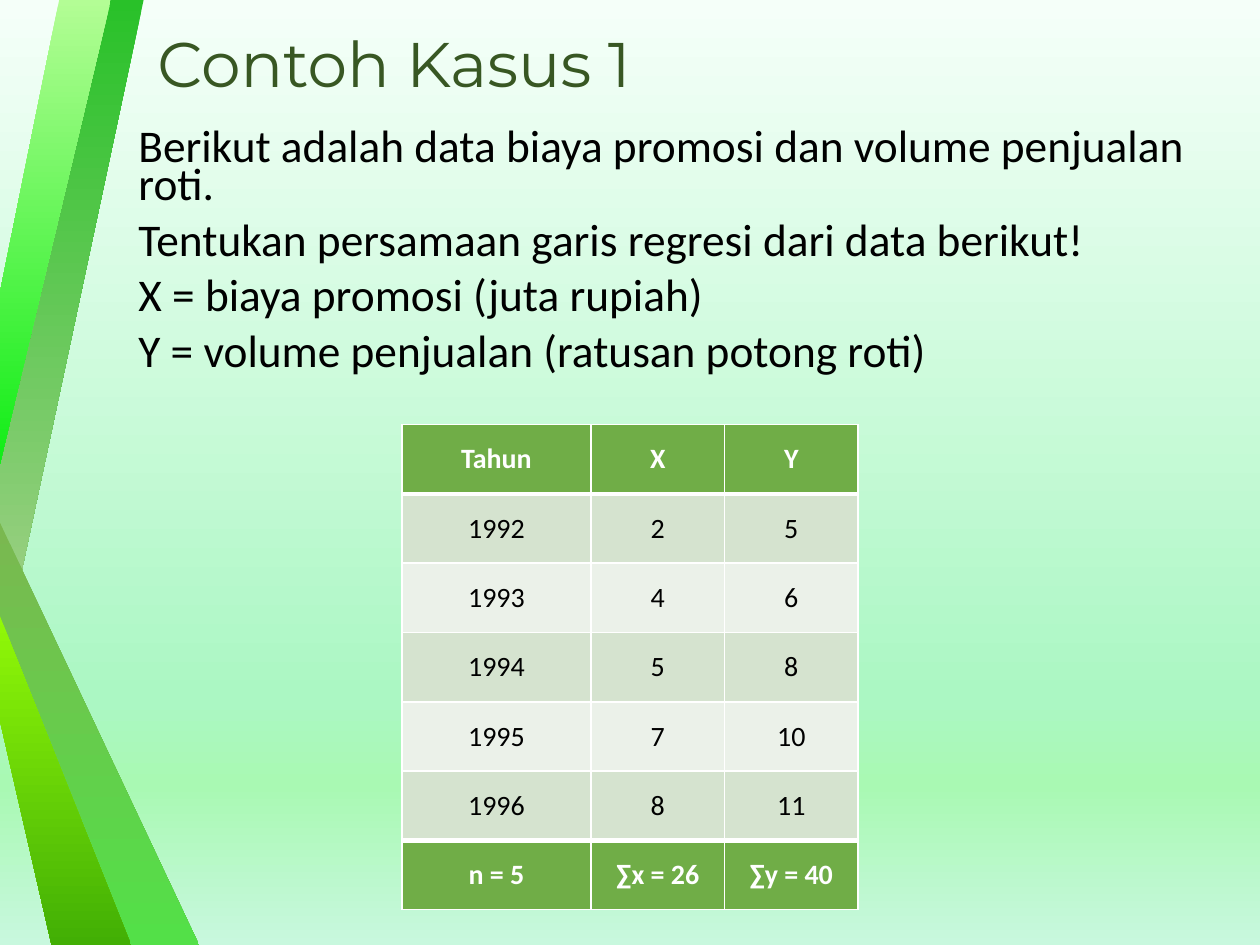
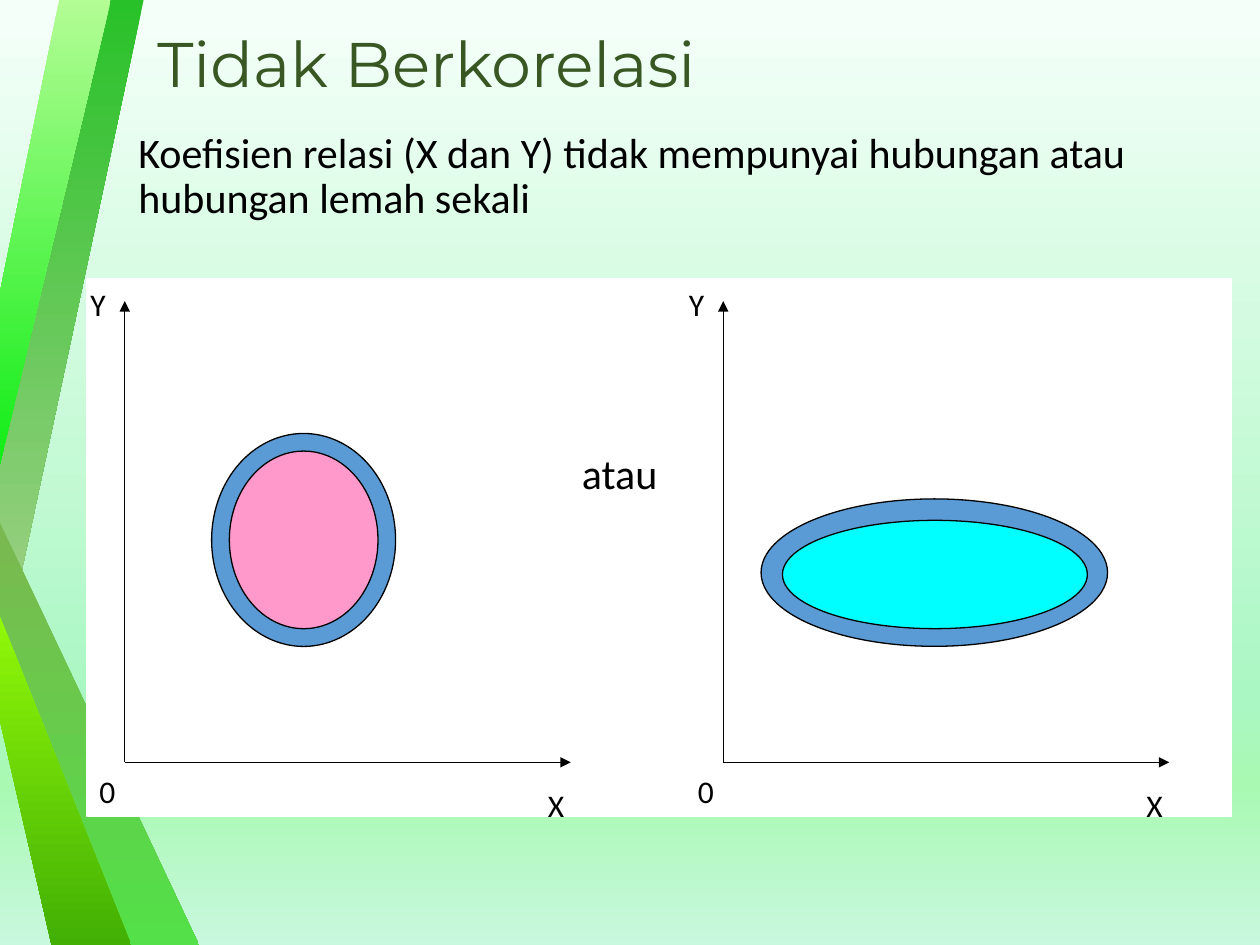
import copy

import pptx
import pptx.dml.color
import pptx.enum.dml
import pptx.enum.shapes
import pptx.enum.text
import pptx.oxml
import pptx.oxml.ns
import pptx.util

Inches = pptx.util.Inches
Pt = pptx.util.Pt
SHAPES = pptx.enum.shapes.MSO_SHAPE
ANCHOR = pptx.enum.text.MSO_ANCHOR
CENTER = pptx.enum.text.PP_ALIGN.CENTER

BLACK, WHITE = "000000", "FFFFFF"
TITLE_GREEN, HEADER_GREEN = "385723", "70AD47"
ROW_GREENS = ["D5E3CF", "EBF1E9"]
RING_BLUE, PINK, CYAN = "5B9BD5", "FF99CC", "00FFFF"

BACKGROUND = [(0, "F5FFF9"), (0.74, "ABF7C3"), (0.83, "A9F9B3"), (1, "C8F8DE")]
# Outline and top-to-bottom colours of each ribbon
RIBBONS = [
    ([(0, 3.66), (0, 5.34), (1.14, 0), (0.87, 0)], "29C129", "A9D18E"),
    ([(0, 2.32), (0, 3.68), (0.88, 0), (0.47, 0)], "B3FD95", "11ED16"),
    ([(0, 4.15), (1.58, 7.5), (1.01, 7.5), (0, 5.01)], "7AB850", "53E048"),
    ([(0, 5.72), (0, 4.89), (1.04, 7.5), (0.41, 7.5)], "91F907", "42AF05"),
]


def color(value):
    return pptx.dml.color.RGBColor.from_string(value)


def inches(values):
    return [Inches(value) for value in values]


class Builder:
    """Holds the deck style and the slide being built."""

    body_font = "Calibri"
    title_font = "Montserrat"

    def __init__(self, deck):
        self.deck = deck
        self.page = None

    def new_page(self, title):
        self.page = self.deck.slides.add_slide(self.deck.slide_layouts[6])
        background = self.page.background
        self.gradient(background.fill, background.element, BACKGROUND)
        for points, top, bottom in RIBBONS:
            self.ribbon(points, [(0, top), (1, bottom)])
        self.text((1.15, 0.21, 8.62, 0.65), [title], size=36, spacing=0.9,
                  font=self.title_font, fill=TITLE_GREEN, anchor=ANCHOR.MIDDLE)

    def gradient(self, fill, element, stops):
        fill.gradient()
        fill.gradient_angle = 270
        stop_list = element.xpath(".//a:gradFill/a:gsLst")[0]
        while len(stop_list) < len(stops):
            stop_list.append(copy.deepcopy(stop_list[0]))
        for stop, (position, value) in zip(fill.gradient_stops, stops):
            stop.position = position
            stop.color.rgb = color(value)

    def ribbon(self, points, stops):
        corners = [tuple(inches(point)) for point in points]
        outline = self.page.shapes.build_freeform(*corners[0])
        outline.add_line_segments(corners[1:], close=True)
        shape = outline.convert_to_shape()
        shape.shadow.inherit = False
        shape.line.fill.background()
        self.gradient(shape.fill, shape.element, stops)

    def format(self, span, size, fill=BLACK, font=body_font, bold=False):
        values = {"size": Pt(size), "name": font, "bold": bold}
        for name, value in values.items():
            setattr(span.font, name, value)
        span.font.color.rgb = color(fill)

    def text(self, place, lines, size, spacing=1.0, before=0, wrap=True,
             anchor=ANCHOR.TOP, **style):
        box = self.page.shapes.add_textbox(*inches(place))
        frame = box.text_frame
        frame.word_wrap = wrap
        frame.vertical_anchor = anchor
        for index, line in enumerate(lines):
            para = frame.add_paragraph() if index else frame.paragraphs[0]
            para.line_spacing = spacing
            para.space_before = Pt(before if index else 0)
            span = para.add_run()
            span.text = line
            self.format(span, size, **style)

    def label(self, place, words, size=18):
        self.text(place, [words], size, wrap=False)

    def shape(self, kind, place, fill, line=BLACK, width=0.75):
        shape = self.page.shapes.add_shape(kind, *inches(place))
        shape.shadow.inherit = False
        shape.fill.solid()
        shape.fill.fore_color.rgb = color(fill)
        shape.line.color.rgb = color(line)
        shape.line.width = Pt(width)

    def arrow(self, start, end):
        arrow = self.page.shapes.add_connector(
            pptx.enum.shapes.MSO_CONNECTOR.STRAIGHT, *inches(start + end))
        arrow.line.color.rgb = color(BLACK)
        arrow.line.width = Pt(0.75)
        properties = arrow.element.spPr
        line = properties.find(pptx.oxml.ns.qn("a:ln"))
        namespace = pptx.oxml.ns.nsdecls("a")
        line.append(pptx.oxml.parse_xml(f'<a:tailEnd {namespace} type="triangle"/>'))
        properties.append(pptx.oxml.parse_xml(f"<a:effectLst {namespace}/>"))

    def axes(self, left):
        origin = (left, 6.05)
        self.arrow(origin, (left + 3.54, 6.05))
        self.arrow(origin, (left, 2.39))
        self.label((left - 0.3, 6.08, 0.34, 0.4), "0")
        self.label((left - 0.37, 2.21, 0.37, 0.4), "Y")
        self.label((left + 3.26, 6.19, 0.37, 0.4), "X")

    def border(self, cell, widths):
        properties = cell._tc.get_or_add_tcPr()
        for index, (side, width) in enumerate(widths.items()):
            properties.insert(index, pptx.oxml.parse_xml(
                f'<a:ln{side} {pptx.oxml.ns.nsdecls("a")} w="{Pt(width)}">'
                f'<a:solidFill><a:srgbClr val="{WHITE}"/></a:solidFill></a:ln{side}>'))

    def table(self, place, widths, rows):
        frame = self.page.shapes.add_table(len(rows), len(widths), *inches(place))
        table = frame.table
        for column, width in zip(table.columns, widths):
            column.width = Inches(width)
        last = len(rows) - 1
        for index, row in enumerate(rows):
            table.rows[index].height = Inches(place[3] / len(rows))
            strong = index in (0, last)
            fill = HEADER_GREEN if strong else ROW_GREENS[(index - 1) % 2]
            # Thick rules under the header and above the totals
            top = 3 if index in (1, last) else 1
            bottom = 3 if index in (0, last - 1) else 1
            for cell, value in zip(table.rows[index].cells, row):
                cell.fill.solid()
                cell.fill.fore_color.rgb = color(fill)
                cell.vertical_anchor = ANCHOR.MIDDLE
                self.border(cell, {"L": 1, "R": 1, "T": top, "B": bottom})
                para = cell.text_frame.paragraphs[0]
                para.alignment = CENTER
                span = para.add_run()
                span.text = str(value)
                self.format(span, 16, WHITE if strong else BLACK, bold=strong)


def sample_case(builder):
    builder.new_page("Contoh Kasus 1")
    builder.text((1, 1, 8.78, 2.2), [
        "Berikut adalah data biaya promosi dan volume penjualan roti.",
        "Tentukan persamaan garis regresi dari data berikut!",
        "X = biaya promosi (juta rupiah)",
        "Y = volume penjualan (ratusan potong roti)",
    ], size=25.9, spacing=0.7, before=10)
    builder.table((3.19, 3.37, 3.62, 3.85), [1.5, 1.06, 1.06], [
        ("Tahun", "X", "Y"),
        (1992, 2, 5),
        (1993, 4, 6),
        (1994, 5, 8),
        (1995, 7, 10),
        (1996, 8, 11),
        ("n = 5", "∑x = 26", "∑y = 40"),
    ])


def no_correlation(builder):
    builder.new_page("Tidak Berkorelasi")
    builder.text((1, 1, 8.78, 1), [
        "Koefisien relasi (X dan Y) tidak mempunyai hubungan atau "
        "hubungan lemah sekali"], size=24, spacing=0.9)
    builder.shape(SHAPES.RECTANGLE, (0.69, 2.21, 9.08, 4.27), WHITE, WHITE, 1)
    # Two plots, each with a ringed cloud of points
    plots = [
        (0.99, (1.68, 3.44, 1.46, 1.69), (1.82, 3.58, 1.18, 1.41), PINK),
        (5.74, (6.04, 3.96, 2.75, 1.17), (6.21, 4.13, 2.42, 0.86), CYAN),
    ]
    for left, ring, cloud, fill in plots:
        builder.axes(left)
        builder.shape(SHAPES.OVAL, ring, RING_BLUE)
        builder.shape(SHAPES.OVAL, cloud, fill)
    builder.label((4.52, 3.5, 0.89, 0.5), "atau", size=24)


def main():
    deck = pptx.Presentation()
    deck.slide_width, deck.slide_height = inches((10, 7.5))
    builder = Builder(deck)
    sample_case(builder)
    no_correlation(builder)
    deck.save("out.pptx")


if __name__ == "__main__":
    main()
